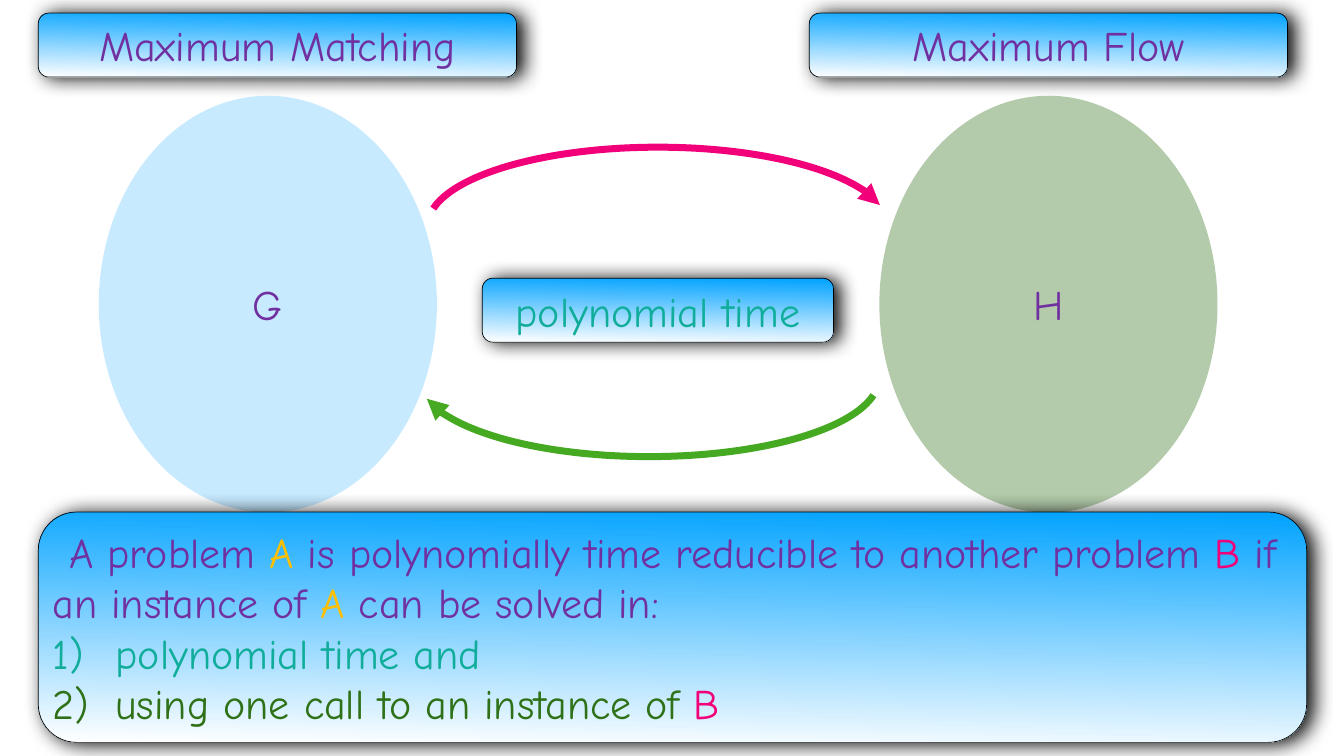
from lxml.etree import SubElement
from pptx import Presentation
from pptx.dml.color import RGBColor
from pptx.enum.shapes import MSO_SHAPE
from pptx.enum.text import MSO_ANCHOR, PP_ALIGN
from pptx.oxml.ns import qn
from pptx.util import Inches, Pt

FONT = "Comic Neue"
PURPLE, TEAL, GOLD = "7030A0", "10AD9B", "FFC000"
PINK, GREEN, DARK_GREEN = "F10079", "45AA21", "2E7116"
SKY, PANEL_BLUE, WHITE, BLACK = "66C7FF", "00A2FF", "FFFFFF", "000000"


def color(value):
    """Turn a hex string into a colour."""
    return RGBColor.from_string(value)


def add_element(parent, tag, **attributes):
    """Append a DrawingML element with the given attributes."""
    return SubElement(parent, qn(tag), {key: str(value) for key, value in attributes.items()})


def add_figure(page, kind, left, top, width, height):
    """Add a preset shape without the theme's shadow."""
    shape = page.shapes.add_shape(kind, Inches(left), Inches(top), Inches(width), Inches(height))
    shape.shadow.inherit = False
    return shape


def write_text(shape, paragraphs, *, size=60, align=PP_ALIGN.CENTER):
    """Write paragraphs, each a list of (text, colour) spans, centred vertically."""
    frame = shape.text_frame
    frame.word_wrap = True
    frame.vertical_anchor = MSO_ANCHOR.MIDDLE
    frame.margin_left = frame.margin_right = Inches(0.06)
    frame.margin_top = frame.margin_bottom = Inches(0.06)
    for index, spans in enumerate(paragraphs):
        para = frame.add_paragraph() if index else frame.paragraphs[0]
        para.alignment = align
        for text, tint in spans:
            span = para.add_run()
            span.text = text
            span.font.name = FONT
            span.font.size = Pt(size)
            span.font.color.rgb = color(tint)
    return frame


def number_paragraph(para, *, indent=1.25):
    """Give a paragraph an automatic number and a hanging indent."""
    properties = para._p.get_or_add_pPr()
    properties.set("marL", str(Inches(indent)))
    properties.set("indent", str(-Inches(indent)))
    add_element(properties, "a:buFont", typeface=FONT)
    add_element(properties, "a:buAutoNum", type="arabicParenR")


def add_panel(page, left, top, width, height):
    """Add a rounded panel with a blue gradient and a soft shadow."""
    panel = add_figure(page, MSO_SHAPE.ROUNDED_RECTANGLE, left, top, width, height)
    panel.fill.gradient()
    panel.fill.gradient_angle = 269
    for stop, position, tint in zip(panel.fill.gradient_stops, (0, 1), (PANEL_BLUE, WHITE)):
        stop.position = position
        stop.color.rgb = color(tint)
    panel.line.color.rgb = color(BLACK)
    panel.line.width = Pt(1)
    effects = panel._element.spPr.find(qn("a:effectLst"))
    shadow = add_element(effects, "a:outerShdw", blurRad=Pt(28), dist=Pt(9), dir=0, rotWithShape=0)
    shade = add_element(shadow, "a:srgbClr", val=BLACK)
    add_element(shade, "a:alpha", val=97000)
    return panel


def add_label(page, text, left, top, width, *, tint=PURPLE):
    """Add a one-line panel."""
    write_text(add_panel(page, left, top, width, 1.27), [[(text, tint)]])


def add_instance(page, letter, left, *, fill):
    """Add a translucent ellipse holding the name of an instance."""
    ellipse = add_figure(page, MSO_SHAPE.OVAL, left, 1.9, 6.71, 8.27)
    ellipse.fill.solid()
    ellipse.fill.fore_color.rgb = color(fill)
    tint = ellipse._element.spPr.find(qn("a:solidFill"))[0]
    add_element(tint, "a:alpha", val=36000)
    ellipse.line.fill.background()
    write_text(ellipse, [[(letter, PURPLE)]])


def add_curved_arrow(page, left, top, *, tint, rotation=0):
    """Add an arc ending in an arrowhead."""
    arc = add_figure(page, MSO_SHAPE.ARC, left, top, 9.13, 3.11)
    arc.adjustments[0] = 110.59
    arc.adjustments[1] = 212.83
    arc.rotation = rotation
    arc.fill.background()
    arc.line.color.rgb = color(tint)
    arc.line.width = Pt(10)
    add_element(arc.line._get_or_add_ln(), "a:tailEnd", type="triangle")


def add_definition(page):
    """Add the panel that defines a polynomial time reduction."""
    frame = write_text(add_panel(page, 0.76, 10.16, 25.17, 4.57), [
        [("A problem ", PURPLE), ("A", GOLD),
         (" is polynomially time reducible to another problem ", PURPLE),
         ("B", PINK), (" if", PURPLE)],
        [("an instance of ", PURPLE), ("A", GOLD), (" can be solved in:", PURPLE)],
        [("polynomial time and", TEAL)],
        [("using one call to an instance of ", DARK_GREEN), ("B", PINK)],
    ], align=PP_ALIGN.LEFT)
    frame.paragraphs[0].alignment = PP_ALIGN.CENTER
    for para in frame.paragraphs[2:]:
        number_paragraph(para)


def main():
    """Build the slide on reducing matching to flow."""
    deck = Presentation()
    deck.slide_width, deck.slide_height = Inches(26.67), Inches(15)
    page = deck.slides.add_slide(deck.slide_layouts[6])
    add_label(page, "Maximum Matching", 0.76, 0.26, 9.49)
    add_label(page, "Maximum Flow", 16.06, 0.26, 9.49)
    add_instance(page, "G", 1.96, fill=SKY)
    add_instance(page, "H", 17.45, fill=DARK_GREEN)
    add_curved_arrow(page, 8.49, 2.92, tint=PINK)
    add_curved_arrow(page, 8.31, 5.95, tint=GREEN, rotation=180)
    add_label(page, "polynomial time", 9.57, 5.52, 6.97, tint=TEAL)
    add_definition(page)
    deck.save("out.pptx")


if __name__ == "__main__":
    main()
